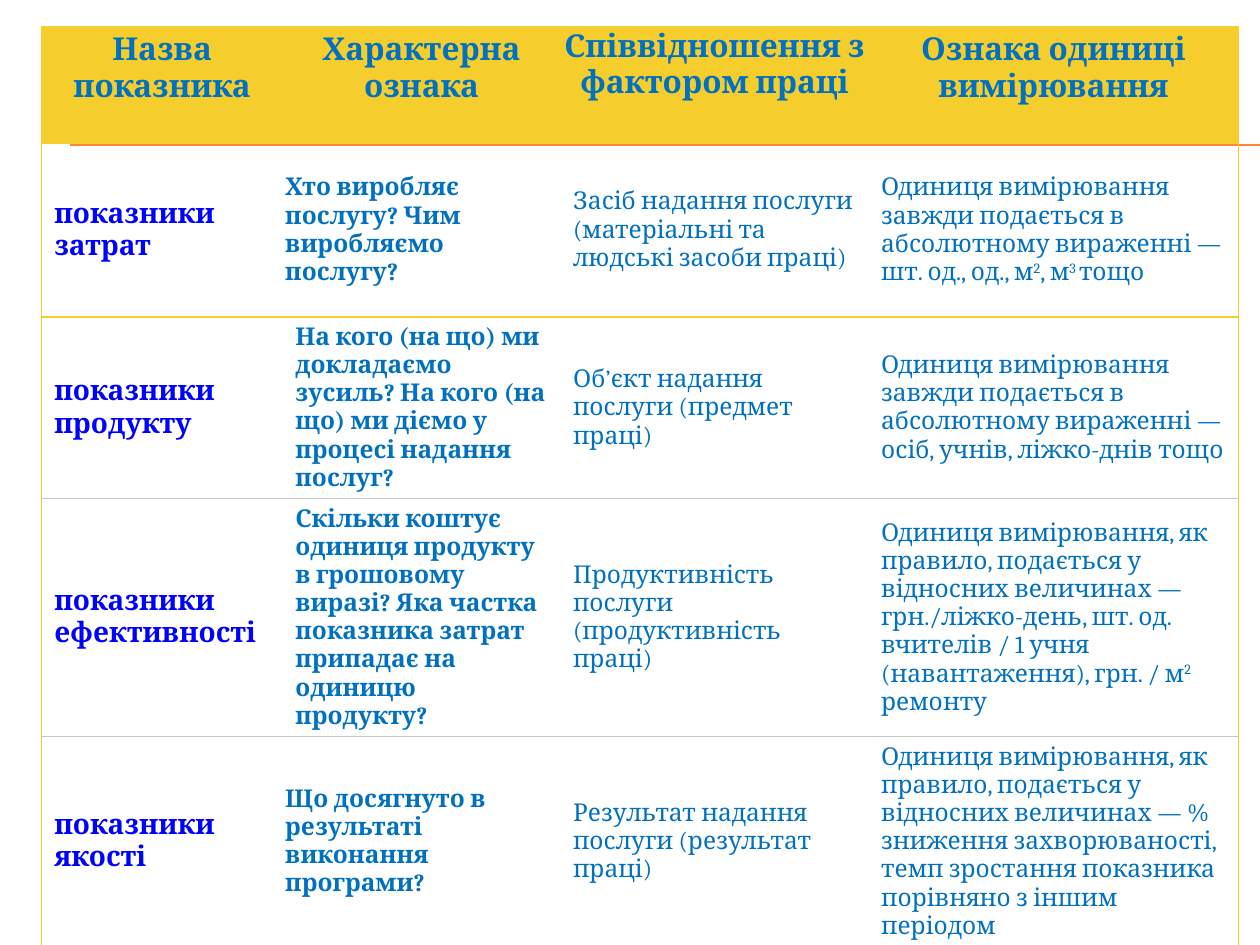
from lxml.etree import SubElement
from pptx import Presentation
from pptx.dml.color import RGBColor
from pptx.enum.shapes import MSO_CONNECTOR as Connector
from pptx.enum.text import MSO_ANCHOR as Anchor, PP_ALIGN as Align
from pptx.oxml.ns import qn
from pptx.util import Cm, Pt

YELLOW = RGBColor(0xF5, 0xCD, 0x2D)
ORANGE = RGBColor(0xFE, 0x86, 0x37)
GREY = RGBColor(0xC4, 0xC8, 0xC4)
BLUE = RGBColor(0x00, 0x70, 0xC0)
BRIGHT_BLUE = RGBColor(0x00, 0x00, 0xFF)
FONT = "Cambria"

# Content: text between ^ marks is superscript
HEADERS = ["Назва показника", "Характерна ознака",
           "Співвідношення з фактором праці", "Ознака одиниці вимірювання"]
INDICATORS = [
    ("показники затрат",
     "Хто виробляє послугу? Чим виробляємо послугу?",
     "Засіб надання послуги (матеріальні та людські засоби праці)",
     "Одиниця вимірювання завжди подається в абсолютному вираженні — "
     "шт. од., од., м^2^, м^3 ^тощо"),
    ("показники продукту",
     "На кого (на що) ми докладаємо зусиль? На кого (на що) ми діємо "
     "у процесі надання послуг?",
     "Об’єкт надання послуги (предмет праці)",
     "Одиниця вимірювання завжди подається в абсолютному вираженні — "
     "осіб, учнів, ліжко-днів тощо"),
    ("показники ефективності",
     "Скільки коштує одиниця продукту в грошовому виразі? Яка частка "
     "показника затрат припадає на одиницю продукту?",
     "Продуктивність послуги (продуктивність праці)",
     "Одиниця вимірювання, як правило, подається у відносних величинах — "
     "грн./ліжко-день, шт. од. вчителів / 1 учня (навантаження), "
     "грн. / м^2^ ремонту"),
    ("показники якості",
     "Що досягнуто в результаті виконання програми?",
     "Результат надання послуги (результат праці)",
     "Одиниця вимірювання, як правило, подається у відносних величинах — "
     "% зниження захворюваності, темп зростання показника порівняно "
     "з іншим періодом"),
]
ROWS = [HEADERS, *INDICATORS]
COLUMN_WIDTHS = [4.86, 5.6, 6.21, 7.46]
ROW_HEIGHTS = [2.36] + [3.5] * len(INDICATORS)
TIGHT_CELLS = {(0, 2), (1, 1), (4, 1)}
COLUMN_FORMATS = [
    dict(size=16, color=BRIGHT_BLUE, bold=True),
    dict(size=14, bold=True),
    dict(size=14),
    dict(size=14),
]


def write_text(cell, text, size=18, color=BLUE, bold=False,
               align=Align.LEFT, anchor=Anchor.MIDDLE):
    cell.vertical_anchor = anchor
    paragraph = cell.text_frame.paragraphs[0]
    paragraph.alignment = align
    for index, part in enumerate(text.split("^")):
        run = paragraph.add_run()
        run.text = part
        run.font.name = FONT
        run.font.size = Pt(size)
        run.font.bold = bold
        run.font.color.rgb = color
        if index % 2:
            run.font._element.set("baseline", "30000")


def set_borders(cell, **colors):
    """Draw the given sides (L, R, T, B) and hide the others."""
    properties = cell._tc.get_or_add_tcPr()
    for side in "LRTB":
        line = SubElement(properties, qn(f"a:ln{side}"), w=str(Pt(0.75)))
        color = colors.get(side)
        if color is None:
            SubElement(line, qn("a:noFill"))
        else:
            fill = SubElement(line, qn("a:solidFill"))
            SubElement(fill, qn("a:srgbClr"), val=str(color))


def add_rule(slide, y):
    rule = slide.shapes.add_connector(
        Connector.STRAIGHT, Cm(1.42), Cm(y), Cm(25.4), Cm(y))
    rule.line.color.rgb = ORANGE
    rule.line.width = Pt(0.75)
    SubElement(rule._element.spPr, qn("a:effectLst"))


def add_indicator_table(slide):
    table = slide.shapes.add_table(
        len(ROWS), len(HEADERS), Cm(0.84), Cm(0.53),
        Cm(sum(COLUMN_WIDTHS)), Cm(sum(ROW_HEIGHTS))).table
    table.first_row = table.horz_banding = False
    for column, width in zip(table.columns, COLUMN_WIDTHS):
        column.width = Cm(width)
    for row, height in zip(table.rows, ROW_HEIGHTS):
        row.height = Cm(height)

    # Line above each row, then the one below the last row
    levels = [YELLOW, YELLOW, YELLOW, GREY, GREY, YELLOW]
    last_column = len(HEADERS) - 1
    for r, texts in enumerate(ROWS):
        for c, text in enumerate(texts):
            cell = table.cell(r, c)
            set_borders(cell, T=levels[r], B=levels[r + 1],
                        L=YELLOW if c == 0 else None,
                        R=YELLOW if c == last_column else None)
            if (r, c) in TIGHT_CELLS:
                cell.margin_left = cell.margin_right = Cm(0.05)
                cell.margin_top = cell.margin_bottom = Cm(0.05)
            if r == 0:
                cell.fill.solid()
                cell.fill.fore_color.rgb = YELLOW
                write_text(cell, text, bold=True, align=Align.CENTER,
                           anchor=Anchor.TOP)
            else:
                cell.fill.background()
                write_text(cell, text, **COLUMN_FORMATS[c])


def main():
    presentation = Presentation()
    presentation.slide_width, presentation.slide_height = Cm(25.4), Cm(19.05)
    slide = presentation.slides.add_slide(presentation.slide_layouts[6])
    # Double rule under the header, behind the table
    for y in (2.92, 2.94):
        add_rule(slide, y)
    add_indicator_table(slide)
    presentation.save("out.pptx")


if __name__ == "__main__":
    main()
